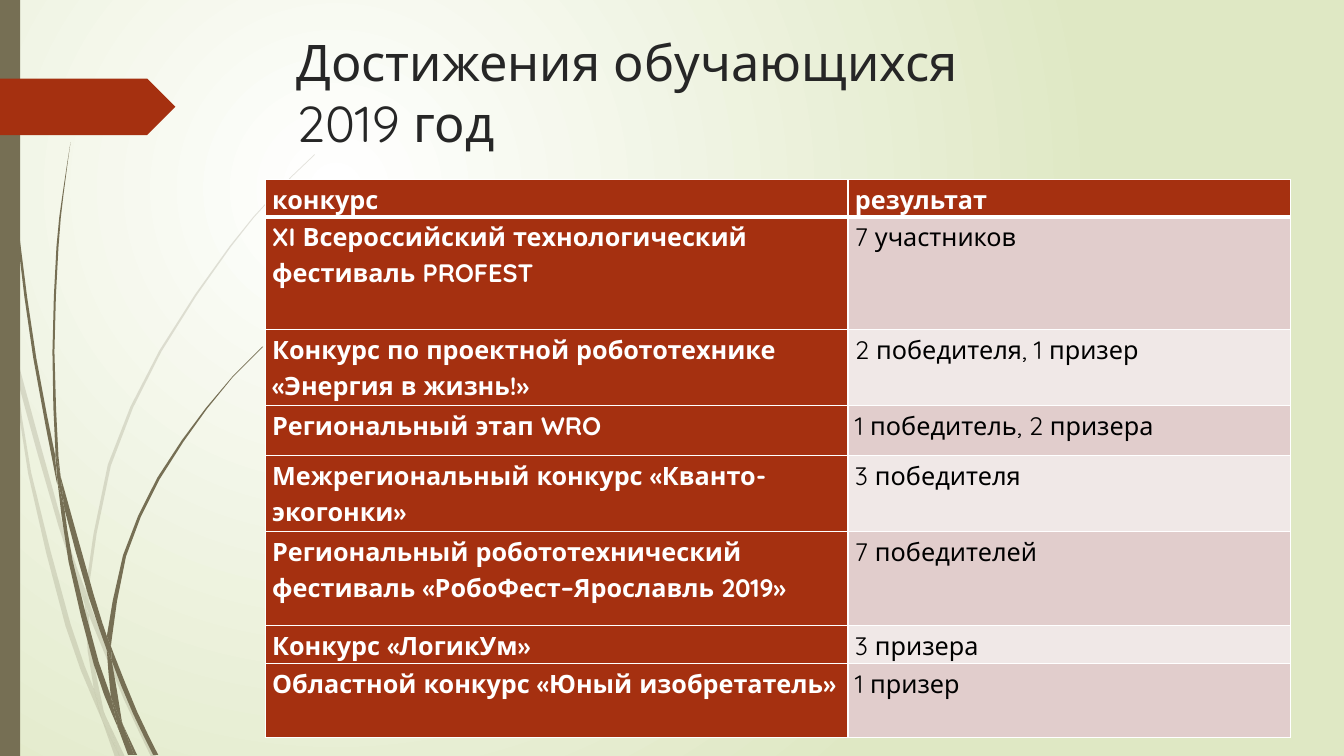
import pptx
import pptx.util
import pptx.dml.color
import pptx.enum.shapes
import pptx.enum.text
import pptx.oxml
import pptx.oxml.ns
from lxml import etree

Inches = pptx.util.Inches
RGBColor = pptx.dml.color.RGBColor
qn = pptx.oxml.ns.qn

FONT = "Quicksand"
WHITE = RGBColor(0xFF, 0xFF, 0xFF)
BLACK = RGBColor(0, 0, 0)
DARK = RGBColor(0x26, 0x26, 0x26)
LIME = RGBColor(0xDF, 0xE8, 0xC4)
MOSS = RGBColor(0x76, 0x6F, 0x54)
RUST = RGBColor(0xA5, 0x30, 0x10)
ROSE = RGBColor(0xE1, 0xCD, 0xCC)
PALE = RGBColor(0xF0, 0xE8, 0xE7)

# Each blade part is two edges, one going out and one coming back
FAINT = [
    ([(0.11, 3.5), (0.09, 3.22), (0, 2.82)], [(0, 2.99), (0.1, 3.44), (0.11, 3.5)]),
    ([(0.84, 5.99), (0.58, 5.22), (0.17, 3.76), (0.14, 3.45)],
     [(0.14, 3.45), (0.62, 5.2), (0.85, 5.86)]),
    ([(0.88, 5.96), (0.92, 6.07), (1.27, 6.92), (1.55, 7.51)],
     [(1.5, 7.51), (1.23, 6.94), (0.88, 6.1)]),
    ([(1.19, 7.51), (1.24, 7.51)], [(1.05, 7.11), (1.19, 7.51)]),
    ([(0.93, 6.83), (0.7, 6.19), (0.31, 4.69), (0.17, 3.76), (0.11, 3.5)],
     [(0.11, 3.5), (0.28, 4.7), (0.65, 6.21), (0.92, 6.93), (1.01, 7.14)]),
    ([(0.84, 5.99), (0.87, 6.46), (0.93, 6.83), (0.96, 6.92), (1.05, 7.11)],
     [(1.03, 7.06), (0.91, 6.46), (0.88, 6.1), (0.84, 5.99)]),
    ([(0.88, 5.96), (0.88, 5.84), (1.1, 4.62), (1.6, 3.49), (2.29, 2.45),
      (2.68, 1.98), (2.9, 1.75), (3.12, 1.54)],
     [(3.12, 1.53), (2.89, 1.75), (2.68, 1.97), (2.28, 2.44), (1.58, 3.48),
      (1.07, 4.61), (0.85, 5.84)]),
    ([(1.01, 7.14), (1.14, 7.51)], [(1.19, 7.51), (1.01, 7.14)]),
    ([(0.88, 6.1), (0.88, 5.96), (0.85, 5.86)], [(0.84, 5.99), (0.88, 6.08)]),
    ([(0.93, 6.83), (0.99, 7.07), (1.01, 7.14), (1.19, 7.51)],
     [(1.19, 7.51), (1.05, 7.11), (0.96, 6.92)]),
]
BOLD = [
    ([(0.03, 0), (0.04, 0.48), (0.07, 1.1), (0.17, 2.33), (0.33, 3.55),
      (0.56, 4.77), (0.57, 4.81)],
     [(0.55, 4.57), (0.55, 4.53), (0.36, 3.55), (0.19, 2.32), (0.08, 1.09),
      (0.05, 0.48), (0.04, 0)]),
    ([(0.6, 4.72), (0.64, 5.05), (0.88, 5.92), (1.06, 6.45)],
     [(1.06, 6.31), (0.93, 5.9), (0.6, 4.72)]),
    ([(1.1, 6.41), (1.11, 6.56), (1.32, 7.08), (1.52, 7.49)],
     [(1.57, 7.49), (1.36, 7.06), (1.13, 6.49), (1.1, 6.41)]),
    ([(0.57, 4.77), (0.68, 5.57), (0.93, 6.59), (1.11, 7.08), (1.17, 7.22)],
     [(1.16, 7.17), (1.1, 6.91), (0.98, 6.57), (0.72, 5.56), (0.64, 5.05),
      (0.57, 4.77)]),
    ([(0.6, 4.72), (0.58, 4.53), (0.54, 3.49), (0.58, 2.45), (0.63, 1.93),
      (0.7, 1.41)],
     [(0.7, 1.41), (0.62, 1.93), (0.56, 2.45), (0.52, 3.49), (0.55, 4.49),
      (0.6, 4.72)]),
    ([(1.33, 7.49), (1.36, 7.49)], [(1.22, 7.19), (1.33, 7.49)]),
    ([(0.57, 4.77), (0.64, 5.05)], [(0.6, 4.72), (0.55, 4.49), (0.55, 4.53)]),
    ([(1.1, 6.41), (1.11, 6.33), (1.25, 5.52), (1.58, 4.76), (2.05, 4.06),
      (2.31, 3.74), (2.61, 3.44)],
     [(2.6, 3.44), (2.31, 3.73), (2.04, 4.05), (1.56, 4.74), (1.22, 5.51),
      (1.06, 6.31)]),
    ([(1.17, 7.22), (1.27, 7.49)], [(1.31, 7.49), (1.17, 7.22)]),
    ([(1.06, 6.45), (1.1, 6.91), (1.16, 7.06), (1.22, 7.19)],
     [(1.21, 7.16), (1.11, 6.56), (1.06, 6.45)]),
    ([(1.06, 6.45), (1.11, 6.56)], [(1.1, 6.41), (1.06, 6.31)]),
    ([(1.1, 6.91), (1.16, 7.17), (1.17, 7.22), (1.3, 7.49)],
     [(1.33, 7.49), (1.22, 7.19), (1.16, 7.06), (1.1, 6.91)]),
]
ROWS = [
    (0.37, "конкурс", "результат"),
    (1.12, "XI Всероссийский технологический фестиваль PROFEST", "7 участников"),
    (0.75, "Конкурс по проектной робототехнике «Энергия в жизнь!»",
     "2 победителя, 1 призер"),
    (0.5, "Региональный этап WRO", "1 победитель, 2 призера"),
    (0.75, "Межрегиональный конкурс «Кванто-экогонки»", "3 победителя"),
    (0.94, "Региональный робототехнический фестиваль «РобоФест–Ярославль 2019»",
     "7 победителей"),
    (0.37, "Конкурс «ЛогикУм»", "3 призера"),
    (0.74, "Областной конкурс «Юный изобретатель»", "1 призер"),
]


def write(frame, text, size=18, color=BLACK, bold=False, space=None):
    para = frame.paragraphs[0]
    para.text = text
    para.alignment = pptx.enum.text.PP_ALIGN.LEFT
    para.line_spacing = space
    for run in para.runs:
        run.font.name = FONT
        run.font.size = pptx.util.Pt(size)
        run.font.bold = bold
        run.font.color.rgb = color


def smooth(edge):
    """Return the edge in EMU, with a Catmull-Rom midpoint in each long span."""
    ends = [edge[0], *edge, edge[-1]]
    curve = [edge[0]]
    for a, b, c, d in zip(ends, ends[1:], ends[2:], ends[3:]):
        if abs(c[1] - b[1]) > 0.4:
            curve.append([(9 * (q + r) - p - s) / 16
                          for p, q, r, s in zip(a, b, c, d)])
        curve.append(c)
    return [(Inches(x), Inches(y)) for x, y in curve]


deck = pptx.Presentation()
deck.slide_width = Inches(13.33)
deck.slide_height = Inches(7.5)
slide = deck.slides.add_slide(deck.slide_layouts[5])

# Background glow
back = slide.background.fill
back.gradient()
for stop, color in zip(back.gradient_stops, (WHITE, LIME)):
    stop.color.rgb = color
grad = slide.element.find(".//" + qn("a:gradFill"))
grad.remove(grad.find(qn("a:lin")))
glow = etree.SubElement(grad, qn("a:path"), path="circle")
etree.SubElement(glow, qn("a:fillToRect"), l="50000", t="50000", r="100000", b="100000")

# Grass
for blades, alpha in ((FAINT, 20), (BOLD, 100)):
    group = slide.shapes.add_group_shape()
    for out, home in blades:
        first, *rest = smooth(out) + smooth(home)
        pen = group.shapes.build_freeform(*first)
        pen.add_line_segments(rest)
        blade = pen.convert_to_shape()
        blade.shadow.inherit = False
        blade.fill.solid()
        blade.fill.fore_color.rgb = MOSS
        blade.line.fill.background()
        if alpha < 100:
            tint = blade.element.spPr.find(".//" + qn("a:srgbClr"))
            etree.SubElement(tint, qn("a:alpha"), val=str(alpha * 1000))

# Side bar and arrow
KIND = pptx.enum.shapes.MSO_SHAPE
for kind, top, width, height, color in ((KIND.RECTANGLE, 0, 0.2, 7.5, MOSS),
                                        (KIND.PENTAGON, 0.78, 1.74, 0.56, RUST)):
    mark = slide.shapes.add_shape(kind, 0, Inches(top), Inches(width), Inches(height))
    mark.shadow.inherit = False
    mark.fill.solid()
    mark.fill.fore_color.rgb = color
    mark.line.fill.background()

# Title
title = slide.shapes.title
title.left, title.top = Inches(2.84), Inches(0.26)
title.width, title.height = Inches(9.75), Inches(1.4)
title.text_frame.auto_size = pptx.enum.text.MSO_AUTO_SIZE.NONE
title.text_frame.vertical_anchor = pptx.enum.text.MSO_ANCHOR.TOP
write(title.text_frame, "Достижения обучающихся\v2019 год", size=36, color=DARK)

# Results
table = slide.shapes.add_table(len(ROWS), 2, Inches(2.63), Inches(1.78),
                               Inches(10.17), Inches(5.54)).table
for col, width in zip(table.columns, (5.78, 4.39)):
    col.width = Inches(width)
for i, (height, *texts) in enumerate(ROWS):
    table.rows[i].height = Inches(height)
    for j, text in enumerate(texts):
        cell = table.cell(i, j)
        cell.margin_left = cell.margin_right = Inches(0.07)
        cell.margin_top = cell.margin_bottom = 0
        head = i == 0 or j == 0
        write(cell.text_frame, text, color=WHITE if head else BLACK,
              bold=head, space=1.15)
        for side in "LRTB":
            thick = (i, side) in ((0, "B"), (1, "T"))
            line = etree.SubElement(cell._tc.get_or_add_tcPr(), qn("a:ln" + side),
                                    w=str(pptx.util.Pt(3 if thick else 1)))
            fill = etree.SubElement(line, qn("a:solidFill"))
            etree.SubElement(fill, qn("a:srgbClr"), val=str(WHITE))
        cell.fill.solid()
        cell.fill.fore_color.rgb = RUST if head else (ROSE if i % 2 else PALE)

deck.save("out.pptx")
